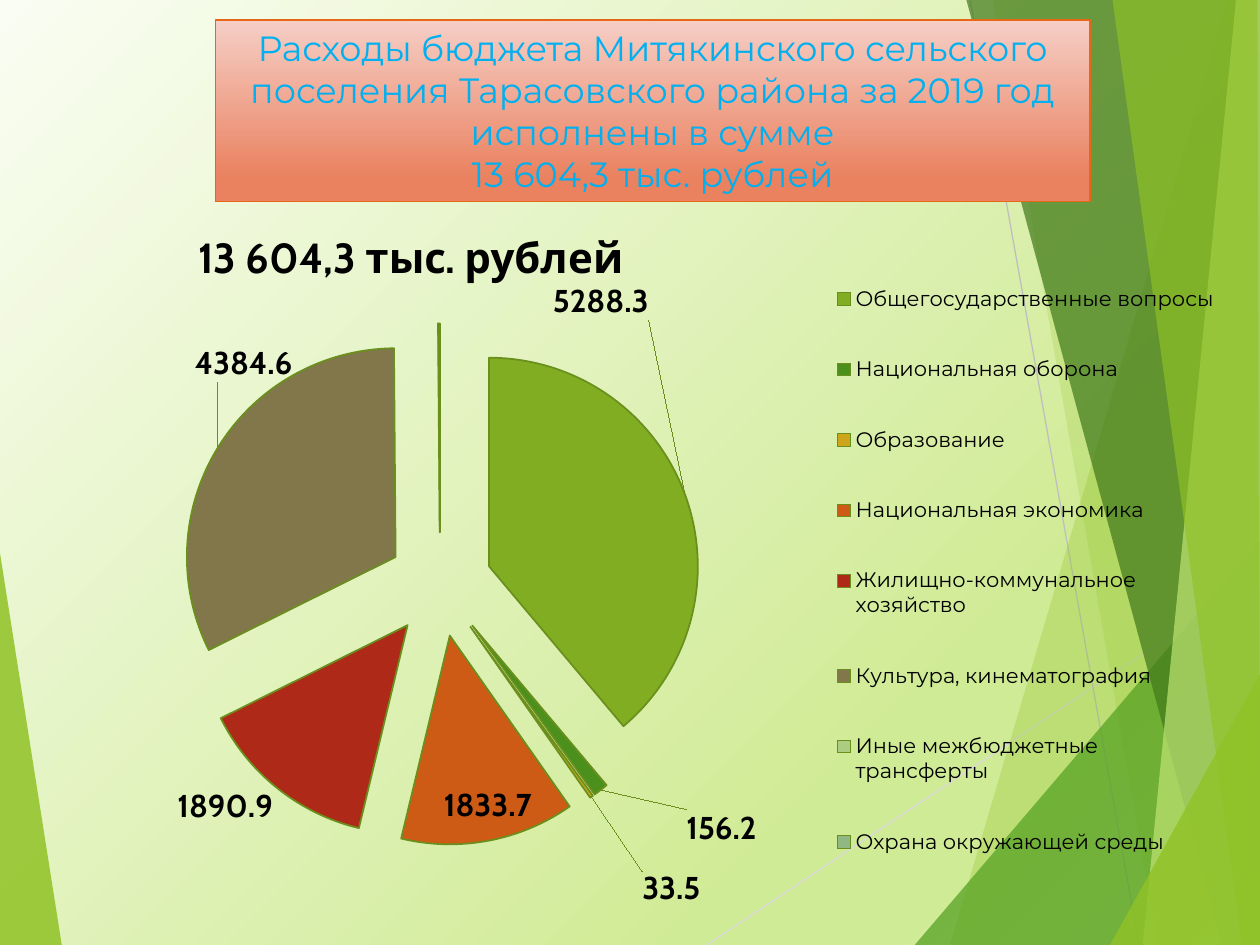
import copy
import lxml.etree
import pptx
import pptx.chart.data
import pptx.dml.color
import pptx.enum.chart
import pptx.enum.shapes
import pptx.enum.text
import pptx.oxml.ns
import pptx.util

Inches = pptx.util.Inches
Pt = pptx.util.Pt
RGBColor = pptx.dml.color.RGBColor
qn = pptx.oxml.ns.qn

BLACK = RGBColor(0x00, 0x00, 0x00)
BLUE = RGBColor(0x00, 0xB0, 0xF0)
LIME = RGBColor(0x90, 0xC2, 0x26)
GREEN = RGBColor(0x54, 0xA0, 0x21)
DARK = RGBColor(0x3F, 0x78, 0x19)
PALE = RGBColor(0xC0, 0xE4, 0x74)
ORANGE = RGBColor(0xE7, 0x66, 0x18)
SILVER = RGBColor(0xD9, 0xD9, 0xD9)
GREY = RGBColor(0xBF, 0xBF, 0xBF)
EDGE = RGBColor(0x6A, 0x8F, 0x1C)
CREAM = RGBColor(0xFA, 0xFD, 0xF3)
LIGHT = RGBColor(0xD0, 0xEB, 0x96)
MIST = RGBColor(0xDF, 0xF1, 0xB9)
ROSE = RGBColor(0xF5, 0xCE, 0xC5)
CORAL = RGBColor(0xEA, 0x81, 0x5F)

PARTS = [
    ("Общегосударственные вопросы", 5288.3, RGBColor(0x80, 0xAD, 0x22)),
    ("Национальная оборона", 156.2, RGBColor(0x4B, 0x8F, 0x1D)),
    ("Образование", 33.5, RGBColor(0xCD, 0xA5, 0x1B)),
    ("Национальная экономика", 1833.7, RGBColor(0xCD, 0x5A, 0x15)),
    ("Жилищно-коммунальное хозяйство", 1890.9, RGBColor(0xAE, 0x29, 0x17)),
    ("Культура, кинематография", 4384.6, RGBColor(0x81, 0x77, 0x4B)),
    ("Иные межбюджетные трансферты", 2.1, RGBColor(0xAC, 0xCD, 0x7F)),
    ("Охрана окружающей среды", 15, RGBColor(0x8F, 0xB8, 0x83)),
]
SHIFTS = [(-0.12, -0.25), (0.07, 0.02), (0.04, 0.1), (-0.04, -0.09), (0, -0.01), (0.07, -0.09)]
SHARDS = [
    ([(7.54, 7.5), (9.75, 0), (10, 0), (10, 7.5)], LIME, 30),
    ([(7.88, 0), (9.19, 7.5), (10, 7.5), (10, 0)], LIME, 20),
    ([(7.26, 7.5), (10, 4.29), (10, 7.5)], GREEN, 72),
    ([(7.67, 0), (9.7, 7.5), (10, 7.5), (10, 0)], DARK, 70),
    ([(9.81, 0), (9.07, 7.5), (10, 7.5), (10, 0)], PALE, 70),
    ([(8.83, 0), (9.86, 7.5), (10, 7.5), (9.98, 0)], LIME, 65),
    ([(8.81, 7.5), (10, 5.35), (10, 7.5)], LIME, 80),
]


class Deck:
    sans = "Montserrat"
    bold = "Cabin"

    def __init__(self, slide):
        self.slide = slide

    def font(self, font, name, size, color, bold=False):
        font.name, font.size, font.bold = name, Pt(size), bold
        font.color.rgb = color

    def blend(self, fill, owner, stops, angle):
        fill.gradient()
        fill.gradient_angle = angle
        last = list(owner.iter(qn("a:gs")))[-1]
        for _ in stops[2:]:
            last.addnext(copy.deepcopy(last))
        for stop, (place, color) in zip(fill.gradient_stops, stops):
            stop.position = place
            stop.color.rgb = color

    def shard(self, points, color, alpha):
        spots = [(Inches(x), Inches(y)) for x, y in points]
        build = self.slide.shapes.build_freeform(*spots[0])
        build.add_line_segments(spots[1:], close=True)
        shape = build.convert_to_shape()
        shape.shadow.inherit = False
        shape.line.fill.background()
        shape.fill.solid()
        shape.fill.fore_color.rgb = color
        tint = next(shape.element.spPr.iter(qn("a:srgbClr")))
        lxml.etree.SubElement(tint, qn("a:alpha"), val=str(alpha * 1000))

    def line(self, start, end, color):
        kind = pptx.enum.shapes.MSO_CONNECTOR.STRAIGHT
        ends = [Inches(n) for n in start + end]
        line = self.slide.shapes.add_connector(kind, *ends)
        line.line.color.rgb = color
        line.line.width = Pt(0.75)
        lxml.etree.SubElement(line.element.spPr, qn("a:effectLst"))

    def title(self, text, box):
        kind = pptx.enum.shapes.MSO_SHAPE.RECTANGLE
        shape = self.slide.shapes.add_shape(kind, *[Inches(n) for n in box])
        shape.shadow.inherit = False
        self.blend(shape.fill, shape.element, [(0, ROSE), (0.88, CORAL)], 270)
        shape.line.color.rgb = ORANGE
        shape.line.width = Pt(1)
        frame = shape.text_frame
        frame.text = text
        frame.word_wrap = True
        frame.vertical_anchor = pptx.enum.text.MSO_ANCHOR.MIDDLE
        para = frame.paragraphs[0]
        para.alignment = pptx.enum.text.PP_ALIGN.CENTER
        for run in para.runs:
            self.font(run.font, self.sans, 20, BLUE)

    def layout(self, owner, index, values, inner=False):
        for old in owner.findall(qn("c:layout")):
            owner.remove(old)
        root = lxml.etree.Element(qn("c:layout"))
        manual = lxml.etree.SubElement(root, qn("c:manualLayout"))
        pairs = [("layoutTarget", "inner")] if inner else []
        if len(values) == 4 or owner.tag == qn("c:title"):
            pairs += [("xMode", "edge"), ("yMode", "edge")]
        pairs += zip("xywh", values)
        for name, value in pairs:
            lxml.etree.SubElement(manual, qn("c:" + name), val=str(value))
        owner.insert(index, root)

    def pie(self, title, box):
        data = pptx.chart.data.CategoryChartData()
        data.categories = [name for name, _, _ in PARTS]
        data.add_series("Series 1", [value for _, value, _ in PARTS])
        kind = pptx.enum.chart.XL_CHART_TYPE.PIE
        spot = [Inches(n) for n in box]
        chart = self.slide.shapes.add_chart(kind, *spot, data).chart
        self.font(chart.font, self.bold, 18, BLACK)
        chart.has_title = True
        chart.chart_title.text_frame.text = title
        run = chart.chart_title.text_frame.paragraphs[0].runs[0]
        self.font(run.font, self.bold, 24, BLACK, True)
        chart.has_legend = True
        chart.legend.position = pptx.enum.chart.XL_LEGEND_POSITION.RIGHT
        chart.legend.include_in_layout = False
        self.font(chart.legend.font, self.sans, 12, BLACK)
        self.slices(chart)
        root = chart.element
        self.layout(next(root.iter(qn("c:title"))), 1, (0.11, 0))
        self.layout(next(root.iter(qn("c:plotArea"))), 0, (0.1, 0.15, 0.45, 0.76), True)
        self.layout(next(root.iter(qn("c:legend"))), 1, (0.66, 0.03, 0.34, 0.96))

    def slices(self, chart):
        plot = chart.plots[0]
        plot.vary_by_categories = True
        series = plot.series[0]
        series.format.line.color.rgb = EDGE
        series.data_labels.show_value = False
        for index, (_, _, color) in enumerate(PARTS):
            form = series.points[index].format
            form.fill.solid()
            form.fill.fore_color.rgb = color
            form.line.color.rgb = EDGE
            form.line.width = Pt(1)
        for index in range(len(SHIFTS)):
            label = series.points[index].data_label
            self.font(label.font, self.bold, 18, BLACK, True)
            label.position = pptx.enum.chart.XL_LABEL_POSITION.OUTSIDE_END
        for label, shift in zip(chart.element.iter(qn("c:dLbl")), SHIFTS):
            self.layout(label, 1, shift)
        burst = lxml.etree.Element(qn("c:explosion"), val="25")
        next(chart.element.iter(qn("c:dPt"))).addprevious(burst)


def main():
    show = pptx.Presentation()
    show.slide_width, show.slide_height = Inches(10), Inches(7.5)
    slide = show.slides.add_slide(show.slide_layouts[6])
    deck = Deck(slide)
    stops = [(0, CREAM), (0.74, LIGHT), (0.83, LIGHT), (1, MIST)]
    deck.blend(slide.background.fill, slide.element, stops, 315)
    deck.shard([(0, 4.39), (0.49, 7.5), (0, 7.5)], LIME, 85)
    deck.line((5.61, 7.5), (10, 4.57), SILVER)
    deck.line((7.7, 0), (9.04, 7.5), GREY)
    for points, color, alpha in SHARDS:
        deck.shard(points, color, alpha)
    deck.title(
        "Расходы бюджета Митякинского сельского поселения Тарасовского района "
        "за 2019 год исполнены в сумме\v13 604,3 тыс. рублей",
        (1.71, 0.16, 6.94, 1.44),
    )
    deck.pie("13 604,3 тыс. рублей", (0.5, 1.75, 9.21, 5.45))
    show.save("out.pptx")


if __name__ == "__main__":
    main()
